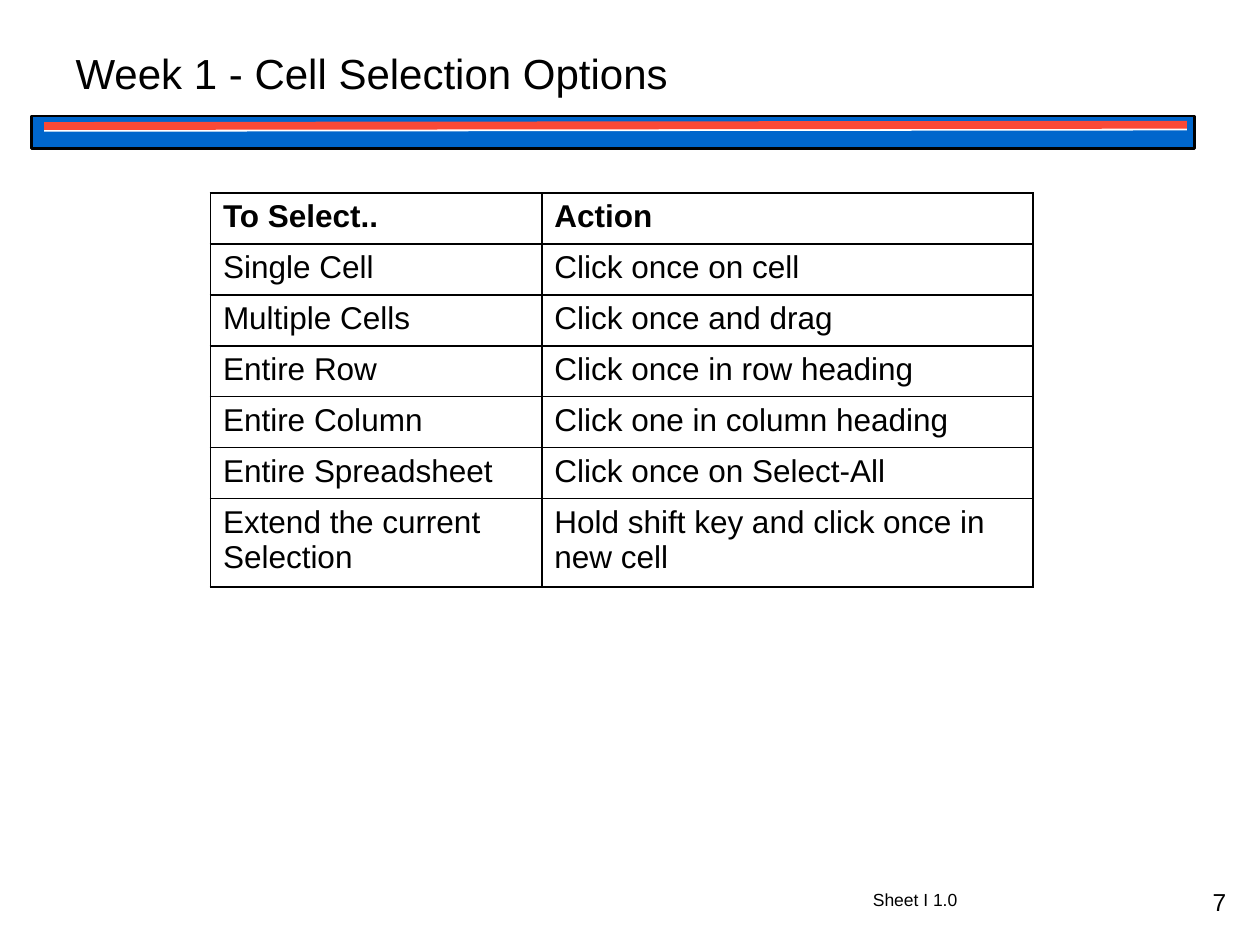
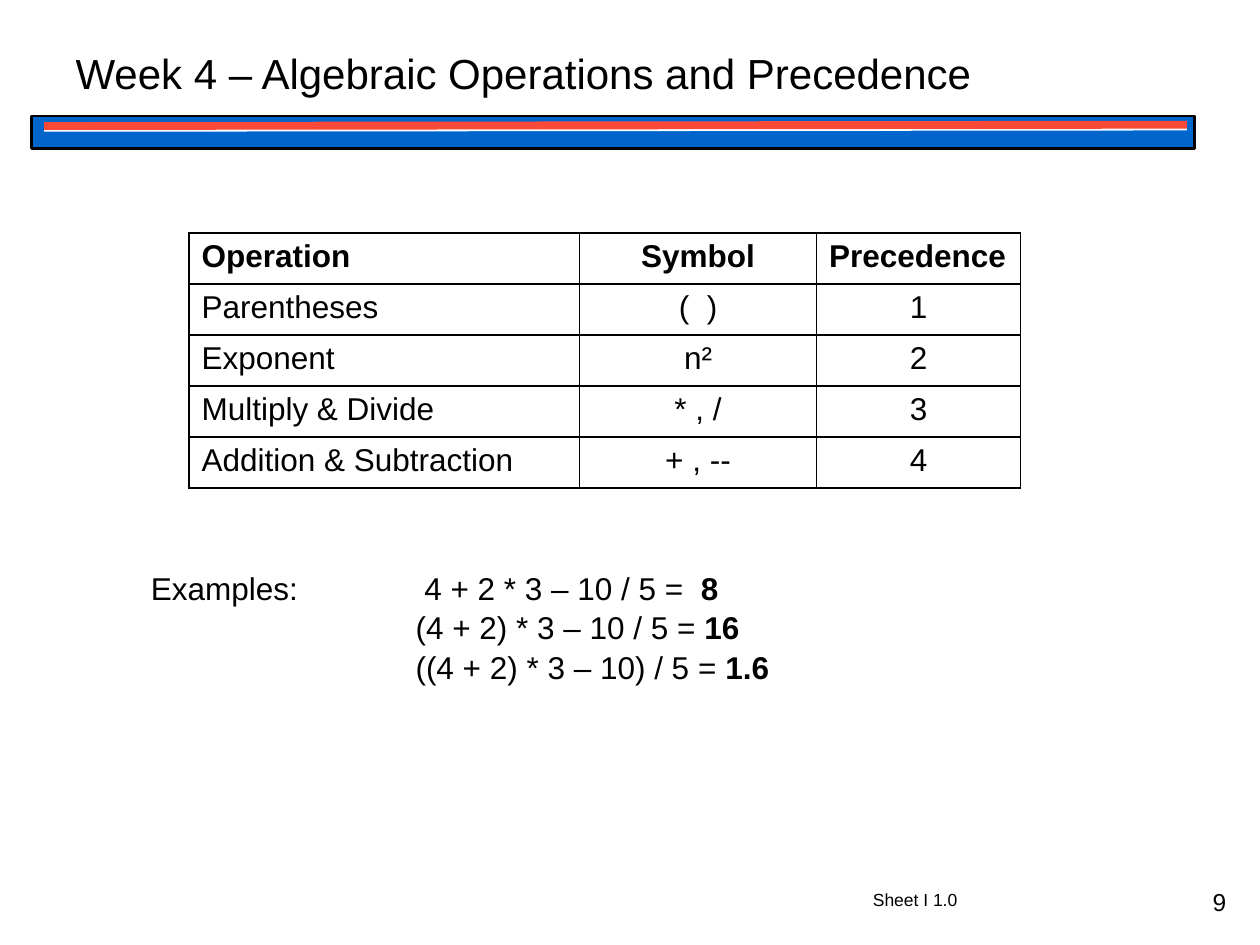
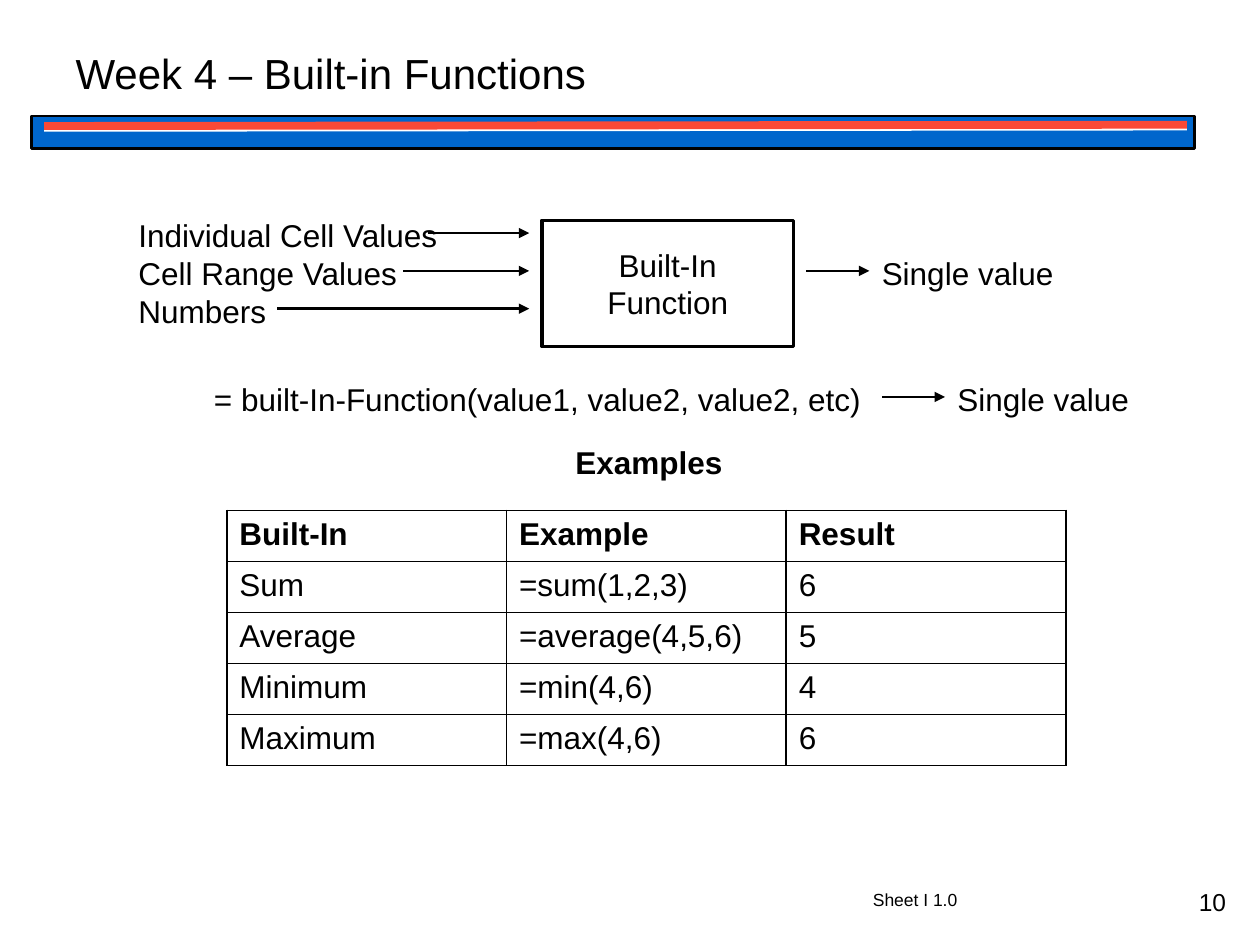
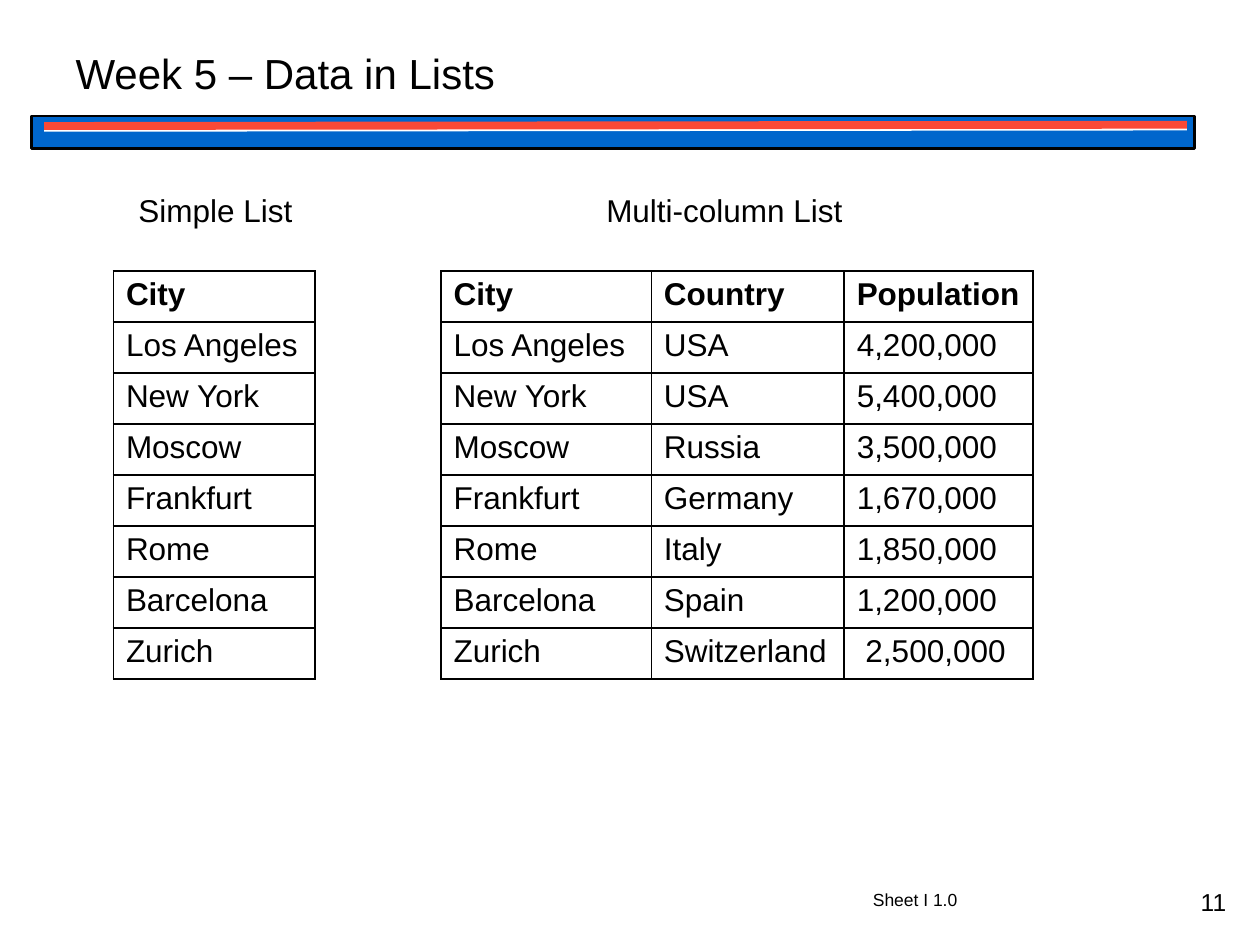
from dataclasses import dataclass

from lxml import etree
from pptx import Presentation
from pptx import util as u
from pptx.dml.color import RGBColor
from pptx.enum import shapes, text
from pptx.oxml import ns

Inches = u.Inches
LEFT, CENTER, RIGHT = text.PP_ALIGN.LEFT, text.PP_ALIGN.CENTER, text.PP_ALIGN.RIGHT


@dataclass(frozen=True)
class Theme:
    font: str = "Arial"
    ink: str = "000000"
    paper: str = "FFFFFF"
    blue: str = "0066CC"
    red: str = "FA4936"
    gray: str = "808080"
    title_size: int = 24
    body_size: int = 18
    number_size: int = 14
    footer_size: int = 10
    line_spacing: float = 1.05
    row_height: int = Inches(0.81) // 2
    label_height: float = 0.4


THEME = Theme()


# Shared helpers
def color(code):
    return RGBColor.from_string(code)


def add_xml(parent, tag, **attributes):
    return etree.SubElement(parent, ns.qn(tag), attributes)


def style_frame(frame, size=THEME.body_size, align=LEFT, bold=False):
    for para in frame.paragraphs:
        para.alignment = align
        for span in para.runs:
            span.font.name = THEME.font
            span.font.size = u.Pt(size)
            span.font.bold = bold
            span.font.color.rgb = color(THEME.ink)


def add_label(parts, left, top, width, words, height=THEME.label_height,
              size=THEME.body_size, align=LEFT, bold=False):
    box = parts.add_textbox(Inches(left), Inches(top), Inches(width), Inches(height))
    frame = box.text_frame
    frame.word_wrap = True
    frame.text = words
    style_frame(frame, size, align, bold)
    for para in frame.paragraphs:
        para.line_spacing = THEME.line_spacing
    return box


def add_line(parts, start, end, code=THEME.ink, width=1.5, arrow=False):
    line = parts.add_connector(shapes.MSO_CONNECTOR.STRAIGHT,
                               *(Inches(value) for value in (*start, *end)))
    line.line.color.rgb = color(code)
    line.line.width = u.Pt(width)
    if arrow:
        add_xml(line.line._get_or_add_ln(), "a:tailEnd", type="triangle")
    add_xml(line.element.spPr, "a:effectLst")


def add_rectangle(parts, left, top, width, height, fill, outline, weight):
    box = parts.add_shape(shapes.MSO_SHAPE.RECTANGLE, Inches(left), Inches(top),
                          Inches(width), Inches(height))
    box.shadow.inherit = False
    box.fill.solid()
    box.fill.fore_color.rgb = color(fill)
    box.line.color.rgb = color(outline)
    box.line.width = u.Pt(weight)
    return box


# Band and footer, placed once on the layout
def add_white_shadow(box):
    effects = box.element.spPr.find(ns.qn("a:effectLst"))
    shadow = add_xml(effects, "a:outerShdw", dist=str(u.Pt(5)), dir="5400000",
                     algn="ctr", rotWithShape="0")
    add_xml(shadow, "a:srgbClr", val=THEME.paper)


def add_band(parts, left, top):
    band = parts.add_group_shape()
    for dx, dy, width, height, outline, weight in (
            (0.08, 0.06, 8.84, 0.25, THEME.gray, 0.75),
            (0, 0, 9.23, 0.26, THEME.ink, 1.5)):
        add_white_shadow(add_rectangle(band.shapes, left + dx, top + dy, width, height,
                                       THEME.blue, outline, weight))
    for dy, code, weight in ((0.11, THEME.paper, 2.25), (0.08, THEME.red, 4.5)):
        add_line(band.shapes, (left + 0.1, top + dy), (left + 9.17, top + dy - 0.01),
                 code, weight)
    return band


def decorate_layout(layout, page):
    """Build the shared parts on a page and move them to its layout."""
    footer = add_label(page.shapes, 6.83, 7, 2.67, "Sheet I 1.0", 0.27, THEME.footer_size)
    tree = layout.shapes.element
    for part in (add_band(page.shapes, 0.25, 0.92), footer):
        tree.append(part.element)
    for number, properties in enumerate(tree.xpath(".//p:cNvPr"), start=1):
        properties.set("id", str(number))


def add_page(deck, layout, title, number):
    page = deck.slides.add_slide(layout)
    box = page.shapes.title
    box.left, box.top, box.width, box.height = (
        Inches(value) for value in (0.5, 0.33, 9, 1.25))
    frame = box.text_frame
    frame.text = title
    frame.auto_size = text.MSO_AUTO_SIZE.NONE
    frame.vertical_anchor = text.MSO_ANCHOR.TOP
    style_frame(frame, THEME.title_size)
    add_label(page.shapes, 7.5, 6.98, 2.33, str(number), 0.52, THEME.number_size, RIGHT)
    return page


# Tables
def set_borders(cell):
    properties = cell._tc.get_or_add_tcPr()
    for side in ("a:lnL", "a:lnR", "a:lnT", "a:lnB"):
        border = add_xml(properties, side, w=str(u.Pt(1)))
        add_xml(add_xml(border, "a:solidFill"), "a:srgbClr", val=THEME.ink)


def fill_cell(cell, row, filling):
    if filling == "none" or (filling == "banded" and row and row % 2 == 0):
        cell.fill.background()
        return
    cell.fill.solid()
    cell.fill.fore_color.rgb = color(THEME.paper)
    if filling == "banded" and row:
        swatch = cell._tc.tcPr.find(".//" + ns.qn("a:solidFill") + "[last()]")
        swatch = cell._tc.tcPr.find(ns.qn("a:solidFill"))[0]
        add_xml(swatch, "a:alpha", val="40000")


def add_grid(page, left, top, widths, rows, filling="banded", centered=()):
    grid = page.shapes.add_table(len(rows), len(widths), Inches(left), Inches(top),
                                 Inches(sum(widths)), THEME.row_height * len(rows)).table
    grid.first_row = grid.horz_banding = False
    for column, width in zip(grid.columns, widths):
        column.width = Inches(width)
    for i, values in enumerate(rows):
        grid.rows[i].height = THEME.row_height
        for j, value in enumerate(values):
            cell = grid.cell(i, j)
            cell.text = value
            style_frame(cell.text_frame, align=CENTER if j in centered else LEFT,
                        bold=i == 0)
            set_borders(cell)
            fill_cell(cell, i, filling)
    return grid


# Cell selection
def fill_selection(page):
    rows = [
        ("To Select..", "Action"),
        ("Single Cell", "Click once on cell"),
        ("Multiple Cells", "Click once and drag"),
        ("Entire Row", "Click once in row heading"),
        ("Entire Column", "Click one in column heading"),
        ("Entire Spreadsheet", "Click once on Select-All"),
        ("Extend the current Selection", "Hold shift key and click once in new cell"),
    ]
    grid = add_grid(page, 1.67, 1.53, (2.63, 3.9), rows, "none")
    grid.rows[len(rows) - 1].height = Inches(0.7)


# Operator precedence
def add_worked_examples(page, left, top):
    examples = [(" 4 + 2 * 3 – 10 / 5 =  ", "8"),
                ("(4 + 2) * 3 – 10 / 5 = ", "16"),
                ("((4 + 2) * 3 – 10) / 5 = ", "1.6")]
    add_label(page.shapes, left, top, 1.4, "Examples:")
    box = add_label(page.shapes, left + 2.1, top, 3.7,
                    "\n".join(formula for formula, _ in examples), 1.01)
    for para, (_, result) in zip(box.text_frame.paragraphs, examples):
        para.add_run().text = result
    style_frame(box.text_frame)
    for para in box.text_frame.paragraphs:
        para.runs[1].font.bold = True


def fill_precedence(page):
    rows = [
        ("Operation", "Symbol", "Precedence"),
        ("Parentheses", "(  )", "1"),
        ("Exponent", "n²", "2"),
        ("Multiply & Divide", "* , /", "3"),
        ("Addition & Subtraction", "+ , --", "4"),
    ]
    grid = add_grid(page, 1.5, 1.85, (3.1, 1.88, 1.62), rows, centered=(1, 2))
    grid.cell(0, 2).text_frame.paragraphs[0].alignment = LEFT
    add_worked_examples(page, 1.1, 4.45)


# Built-in functions
def add_function_diagram(page, left, top):
    box = add_rectangle(page.shapes, left + 3.3, top + 0.1, 2, 1,
                        THEME.paper, THEME.ink, 2)
    frame = box.text_frame
    frame.word_wrap = True
    frame.margin_left = frame.margin_right = Inches(0.15)
    frame.vertical_anchor = text.MSO_ANCHOR.MIDDLE
    frame.text = "Built-In Function"
    style_frame(frame, align=CENTER)

    inputs = [("Individual Cell Values", 2.6, 2.4),
              ("Cell Range Values", 2.4, 2.2),
              ("Numbers", 2.1, 1.2)]
    for i, (words, width, arrow_start) in enumerate(inputs):
        y = top + 0.3 * i
        add_label(page.shapes, left, y, width, words)
        add_line(page.shapes, (left + arrow_start, y + 0.2), (left + 3.2, y + 0.2),
                 arrow=True)
    add_result(page.shapes, left + 5.4, top + 0.3)


def add_result(parts, left, top):
    add_label(parts, left + 0.5, top, 1.6, "Single value")
    add_line(parts, (left, top + 0.2), (left + 0.5, top + 0.2), arrow=True)


def add_syntax(page, left, top):
    group = page.shapes.add_group_shape()
    add_label(group.shapes, left, top, 5.5,
              "= built-In-Function(value1, value2, value2, etc)")
    add_result(group.shapes, left + 5.4, top)


def fill_functions(page):
    add_function_diagram(page, 1, 1.65)
    add_syntax(page, 1.6, 2.95)
    add_label(page.shapes, 3.9, 3.45, 2.5, "Examples", align=CENTER, bold=True)
    rows = [
        ("Built-In", "Example", "Result"),
        ("Sum", "=sum(1,2,3)", "6"),
        ("Average", "=average(4,5,6)", "5"),
        ("Minimum", "=min(4,6)", "4"),
        ("Maximum", "=max(4,6)", "6"),
    ]
    add_grid(page, 1.8, 4.05, (2.22,) * 3, rows)


# Lists
def fill_lists(page):
    rows = [
        ("City", "Country", "Population"),
        ("Los Angeles", "USA", "4,200,000"),
        ("New York", "USA", "5,400,000"),
        ("Moscow", "Russia", "3,500,000"),
        ("Frankfurt", "Germany", "1,670,000"),
        ("Rome", "Italy", "1,850,000"),
        ("Barcelona", "Spain", "1,200,000"),
        ("Zurich", "Switzerland", " 2,500,000"),
    ]
    add_label(page.shapes, 1, 1.45, 1.5, "Simple List")
    add_grid(page, 0.9, 2.15, (1.6,), [row[:1] for row in rows])
    add_label(page.shapes, 4.3, 1.45, 2.9, "Multi-column List", align=CENTER)
    add_grid(page, 3.5, 2.15, (1.67, 1.53, 1.5), rows, "solid")


def main():
    deck = Presentation()
    deck.slide_width, deck.slide_height = Inches(10), Inches(7.5)
    layout = deck.slide_layouts.get_by_name("Title Only")
    pages = [
        ("Week 1 - Cell Selection Options", 7, fill_selection),
        ("Week 4 – Algebraic Operations and Precedence", 9, fill_precedence),
        ("Week 4 – Built-in Functions", 10, fill_functions),
        ("Week 5 – Data in Lists", 11, fill_lists),
    ]
    for i, (title, number, fill_page) in enumerate(pages):
        page = add_page(deck, layout, title, number)
        if i == 0:
            decorate_layout(layout, page)
        fill_page(page)
    deck.save("out.pptx")


if __name__ == "__main__":
    main()
